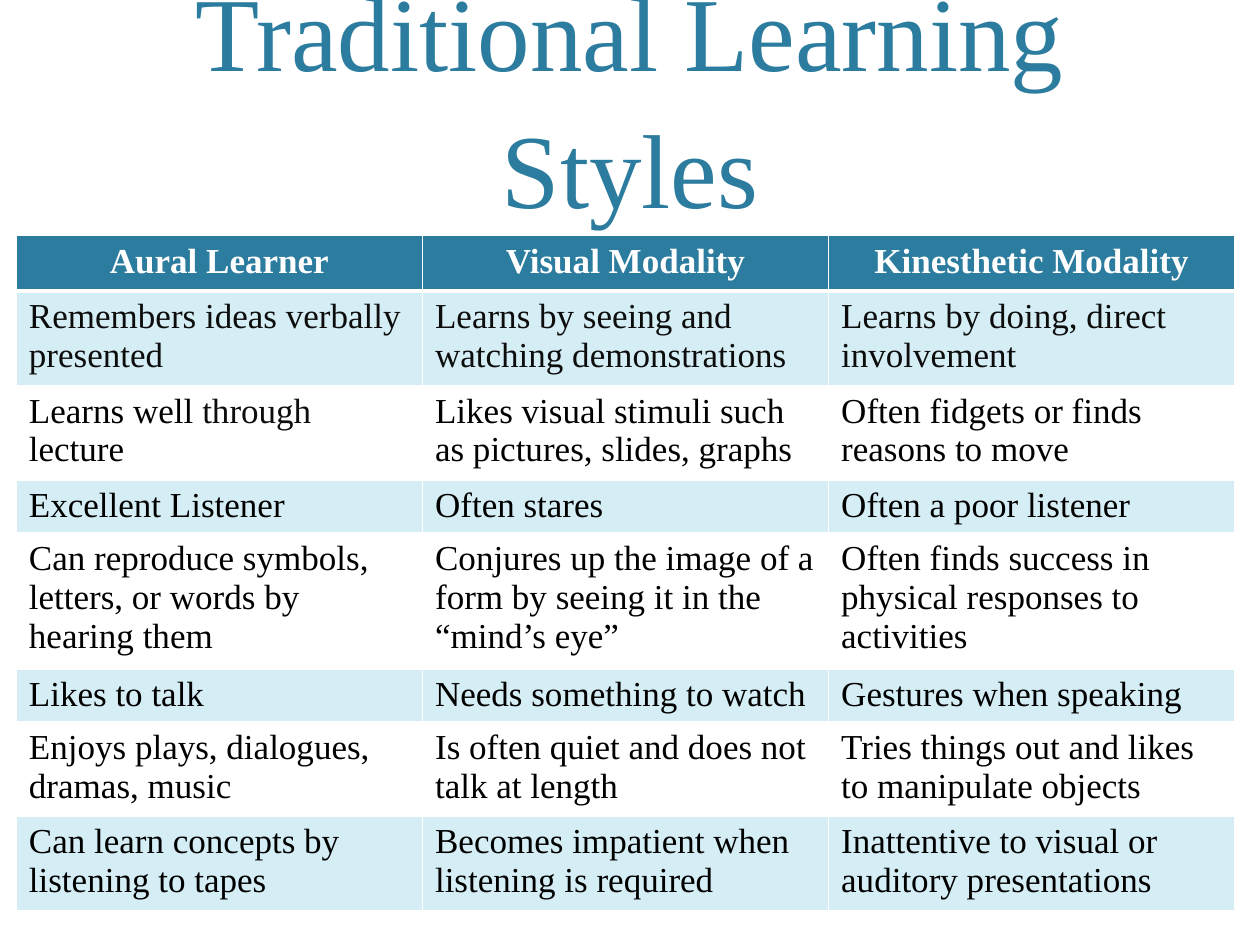
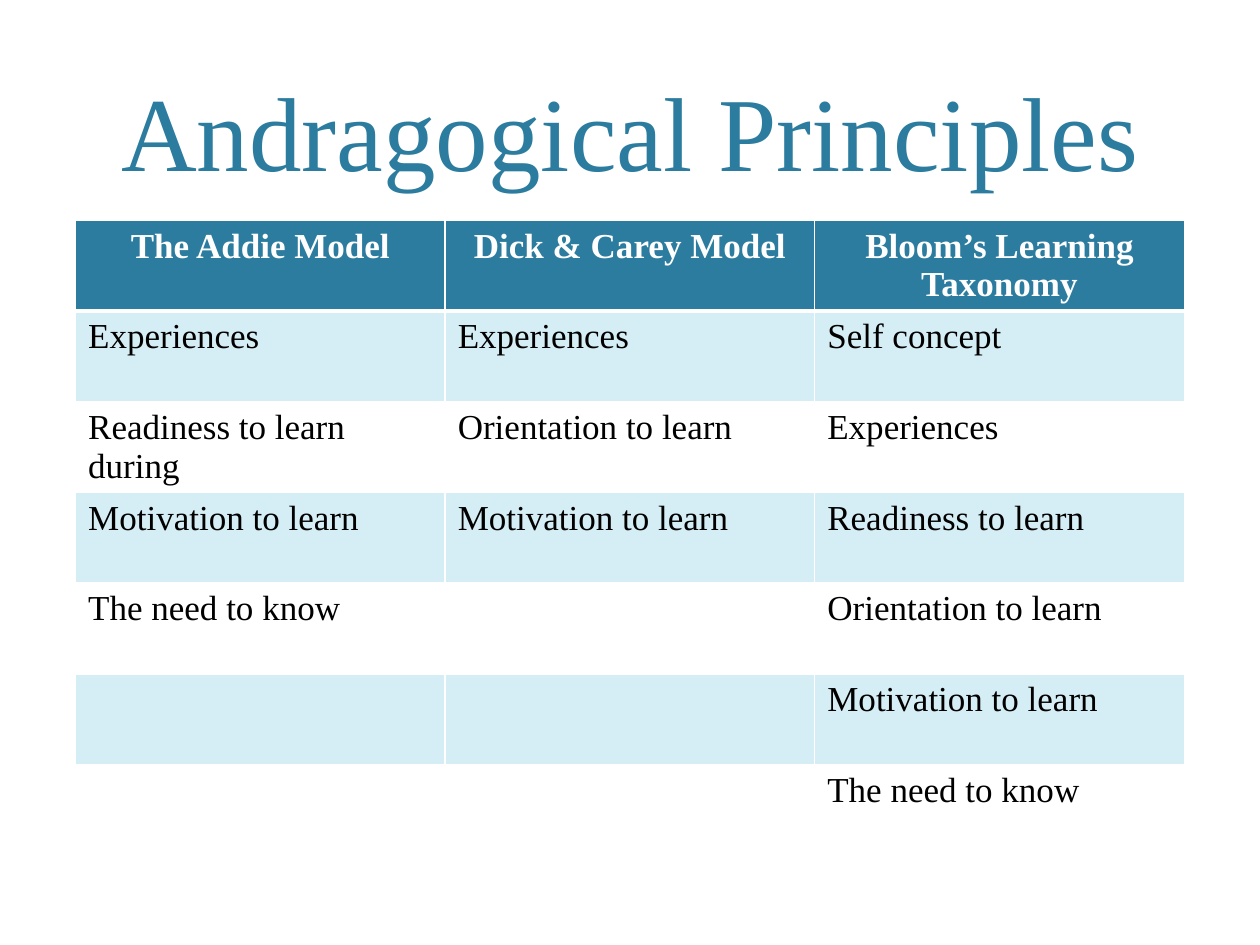
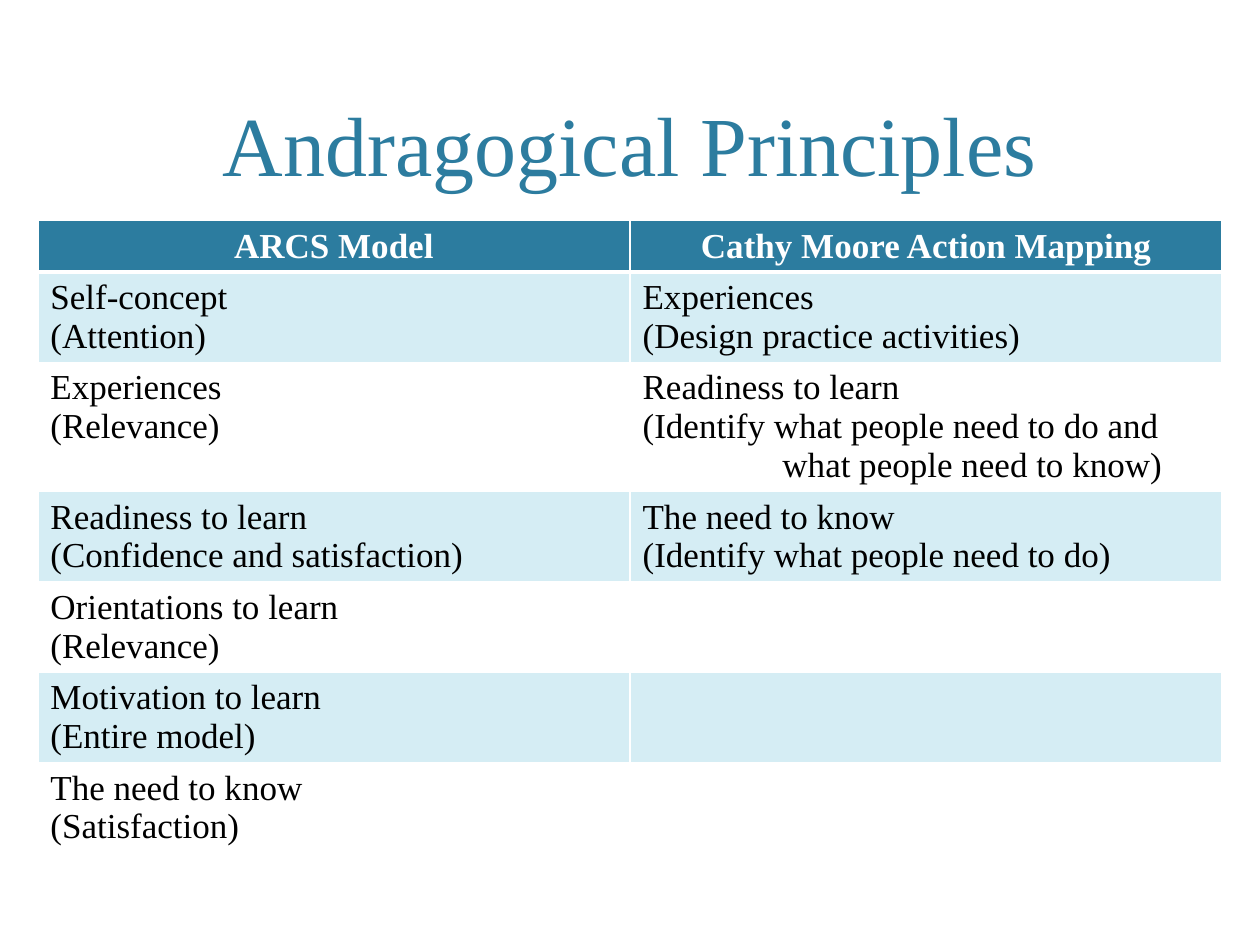
import pptx
import pptx.dml.color
import pptx.enum.text
import pptx.oxml
import pptx.oxml.ns
import pptx.util
from lxml import etree

RGBColor = pptx.dml.color.RGBColor
TEAL = RGBColor(0x2C, 0x7C, 0x9F)
PALE = RGBColor(0xD5, 0xED, 0xF4)
WHITE = RGBColor(0xFF, 0xFF, 0xFF)
BLACK = RGBColor(0x00, 0x00, 0x00)
SOFT = RGBColor(0x0D, 0x0D, 0x0D)

FACE = "Times New Roman"
COLS, ROWS = 100, 75
CENTER = pptx.enum.text.PP_ALIGN.CENTER
LEFT = pptx.enum.text.PP_ALIGN.LEFT

# Cell text: *stars* mark softer ink, line breaks part paragraphs,
# and a leading ">" marks an indented paragraph.
STYLES = [
    ["Aural Learner", "Visual Modality", "Kinesthetic Modality"],
    ["*Remembers ideas verbally presented*",
     "*Learns by seeing and watching demonstrations*",
     "*Learns by doing, direct involvement*"],
    ["Learns well *through* lecture",
     "Likes visual stimuli such as pictures, slides, graphs",
     "Often fidgets or finds reasons to move"],
    ["Excellent Listener", "Often stares", "Often a poor listener"],
    ["Can reproduce symbols, letters, or words by hearing them",
     "Conjures up the image of a form by seeing it in the “mind’s eye”",
     "Often finds success in physical responses to activities"],
    ["Likes to talk", "Needs something to watch", "Gestures when speaking"],
    ["Enjoys plays, dialogues, dramas, music",
     "Is often quiet and does not talk at length",
     "Tries things out and likes to manipulate objects"],
    ["Can learn concepts by listening to tapes",
     "Becomes impatient when listening is required",
     "Inattentive to visual or auditory presentations"],
]

MODELS = [
    ["The Addie Model", "Dick & Carey Model", "Bloom’s Learning Taxonomy"],
    ["Experiences", "Experiences", "Self concept"],
    ["Readiness to learn during", "Orientation to learn", "Experiences"],
    ["Motivation to learn", "Motivation to learn", "Readiness to learn"],
    ["The need to know", "", "Orientation to learn"],
    ["", "", "Motivation to learn"],
    ["", "", "The need to know"],
]

ACTIONS = [
    ["ARCS Model", "Cathy Moore Action Mapping"],
    ["Self-concept\n(Attention)", "Experiences\n(Design practice activities)"],
    ["Experiences\n(Relevance)",
     "Readiness to learn\n(Identify what people need to do and\n"
     ">what people need to know)"],
    ["Readiness to learn\n(Confidence and satisfaction)",
     "The need to know\n(Identify what people need to do)"],
    ["Orientations to learn\n(Relevance)", ""],
    ["Motivation to learn\n(Entire model)", ""],
    ["The need to know\n(Satisfaction)", ""],
]


class Deck:
    def __init__(self):
        self.prs = pptx.Presentation()
        self.prs.slide_width = pptx.util.Inches(10)
        self.prs.slide_height = pptx.util.Inches(7.5)
        self.slide = None

    def x(self, cols):
        return round(self.prs.slide_width * cols / COLS)

    def y(self, rows):
        return round(self.prs.slide_height * rows / ROWS)

    def page(self):
        self.slide = self.prs.slides.add_slide(self.prs.slide_layouts[6])

    def ink(self, para, text, size, color, bold=False):
        """Add runs to a paragraph, with starred parts in softer ink."""
        for i, part in enumerate(text.split("*")):
            if part:
                run = para.add_run()
                run.text = part
                look = {"name": FACE, "size": pptx.util.Pt(size), "bold": bold}
                for key, value in look.items():
                    setattr(run.font, key, value)
                run.font.color.rgb = SOFT if i % 2 else color

    def title(self, text, size, high):
        box = self.slide.shapes.add_textbox(
            self.x(6), self.y(1.2), self.x(88), self.y(high))
        frame = box.text_frame
        look = {"word_wrap": True,
                "auto_size": pptx.enum.text.MSO_AUTO_SIZE.NONE,
                "vertical_anchor": pptx.enum.text.MSO_ANCHOR.BOTTOM}
        for key, value in look.items():
            setattr(frame, key, value)
        para = frame.paragraphs[0]
        para.alignment = CENTER
        para.line_spacing = 1.09
        self.ink(para, text, size, TEAL)

    def edge(self, cell, widths):
        """Draw white borders, given a width in points for each side."""
        props = cell._tc.get_or_add_tcPr()
        for side, width in widths.items():
            line = etree.SubElement(
                props, pptx.oxml.ns.qn("a:ln" + side),
                w=str(pptx.util.Pt(width)))
            fill = etree.SubElement(line, pptx.oxml.ns.qn("a:solidFill"))
            etree.SubElement(
                fill, pptx.oxml.ns.qn("a:srgbClr"), val=str(WHITE))

    def cell(self, cell, text, row):
        head = row == 0
        self.edge(cell, {"L": 1, "R": 1, "T": 3 if row == 1 else 1,
                         "B": 3 if head else 1})
        cell.fill.solid()
        cell.fill.fore_color.rgb = TEAL if head else PALE if row % 2 else WHITE
        frame = cell.text_frame
        for i, line in enumerate(text.split("\n")):
            para = frame.add_paragraph() if i else frame.paragraphs[0]
            para.alignment = CENTER if head else LEFT
            if line.startswith(">"):
                para._p.get_or_add_pPr().set("marL", str(self.x(11.1)))
            self.ink(para, line.lstrip(">"), 20,
                     WHITE if head else BLACK, head)

    def table(self, data, left, top, wide, highs):
        count = len(data[0])
        table = self.slide.shapes.add_table(
            len(data), count, self.x(left), self.y(top),
            self.x(wide), self.y(sum(highs))).table
        table.horz_banding = False
        for col in table.columns:
            col.width = self.x(wide / count)
        for r, (texts, high) in enumerate(zip(data, highs)):
            table.rows[r].height = self.y(high)
            for c, text in enumerate(texts):
                self.cell(table.cell(r, c), text, r)


def main():
    deck = Deck()
    pages = [
        ("Traditional Learning Styles", 60, 17.5, STYLES, 1.3, 18.7, 96.7,
         [4.4, 7.5, 7.5, 4.2, 10.8, 4.2, 7.5, 7.5]),
        ("Andragogical Principles", 60, 14.6, MODELS, 6, 17.5, 88, [7.2] * 7),
        ("Andragogical Principles", 48, 14.6, ACTIONS, 3, 17.5, 94,
         [3.8] + [7] * 6),
    ]
    for text, size, high, data, left, top, wide, highs in pages:
        deck.page()
        deck.title(text, size, high)
        deck.table(data, left, top, wide, highs)
    deck.prs.save("out.pptx")


if __name__ == "__main__":
    main()
